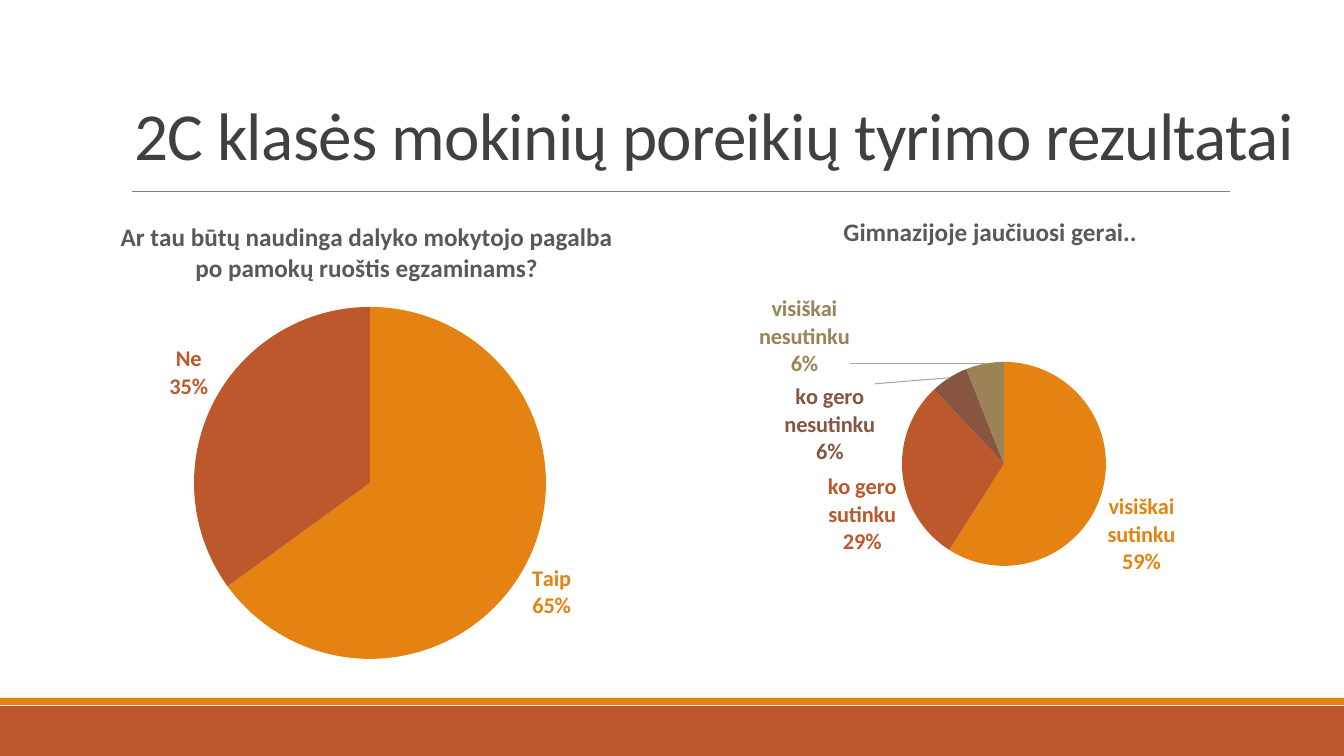
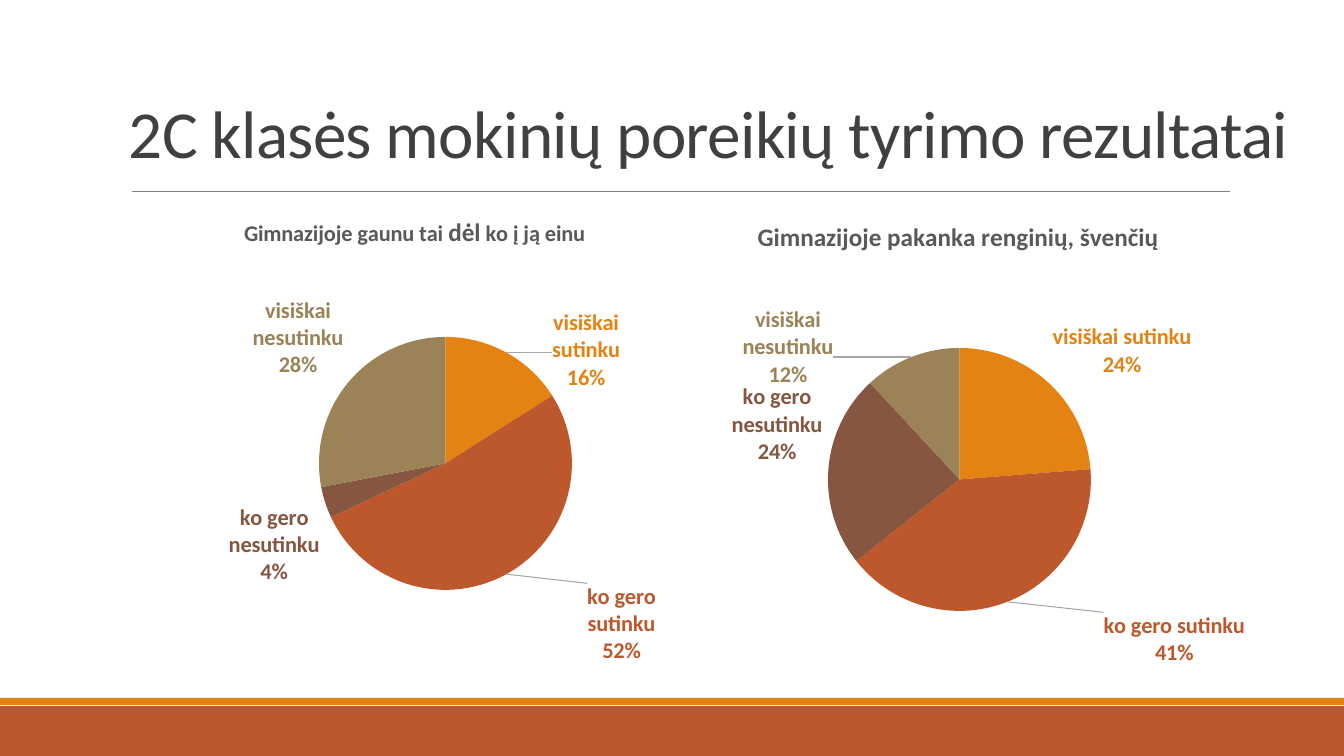
from lxml import etree
from pptx import Presentation
from pptx.chart.data import CategoryChartData
from pptx.dml.color import RGBColor
from pptx.enum.chart import XL_CHART_TYPE, XL_LABEL_POSITION
from pptx.enum.shapes import MSO_CONNECTOR, MSO_SHAPE
from pptx.enum.text import MSO_ANCHOR, PP_ALIGN
from pptx.oxml import parse_xml
from pptx.oxml.ns import nsdecls, qn
from pptx.util import Emu, Pt

# Content: all boxes are left, top, width, height in px
SLIDE_W, SLIDE_H = 1344, 756
FONT = "Calibri"
ORANGE, RUST, GREY = "E48312", "BD582C", "595959"
SLICE_COLOURS = [ORANGE, RUST, "865640", "9B8357"]
TITLE = "2C klasės mokinių poreikių tyrimo rezultatai"
BANDS = [((0, 706, 1344, 50), RUST), ((0, 698, 1344, 7), ORANGE)]
RULE = (132, 191, 1230, 191)
YES_NO = ["Taip", "Ne"]
AGREEMENT = ["visiškai sutinku", "ko gero sutinku",
             "ko gero nesutinku", "visiškai nesutinku"]

# heading: (text, size) runs; pie: left, top, diameter;
# moves: label shift from its usual place, by slice
SLIDES = [
    {"title_box": (121, 19, 1186, 160), "charts": [
        {"box": (53, 192, 634, 492), "pie": (194, 307, 352),
         "heading": [("Ar tau būtų naudinga dalyko mokytojo pagalba "
                      "po pamokų ruoštis egzaminams?", 18)],
         "heading_at": (116, 215), "cats": YES_NO, "vals": [65, 35],
         "moves": {}},
        {"box": (727, 202, 531, 456), "pie": (902, 362, 204),
         "heading": [("Gimnazijoje jaučiuosi gerai..", 18)],
         "heading_at": (839, 210), "cats": AGREEMENT,
         "vals": [59, 29, 6, 6], "moves": {2: (-71, 93), 3: (-134, 20)}},
    ]},
    {"title_box": (118, 17, 1181, 160), "charts": [
        {"box": (104, 192, 616, 488), "pie": (319, 337, 253),
         "heading": [("Gimnazijoje gaunu tai ", 16), ("dėl", 18),
                     (" ko į ją einu", 16)],
         "heading_at": (241, 212), "cats": AGREEMENT,
         "vals": [16, 52, 4, 28], "moves": {0: (43, 44), 1: (78, 4)}},
        {"box": (579, 192, 752, 488), "pie": (828, 348, 263),
         "heading": [("Gimnazijoje pakanka renginių, švenčių", 18)],
         "heading_at": (753, 215), "cats": AGREEMENT,
         "vals": [24, 41, 24, 12],
         "moves": {1: (94, 5), 2: (0, -44), 3: (-76, 37)}},
    ]},
]


# Helpers
def px(n):
    return Emu(round(n * 914400 / 100.8))


def rgb(value):
    return RGBColor.from_string(value)


def style(font, colour, **fmt):
    for name, value in {"name": FONT, **fmt}.items():
        setattr(font, name, value)
    font.color.rgb = rgb(colour)


def set_layout(parent, index, **values):
    """Place a chart part by fractions of the chart's size."""
    for old in parent.findall(qn("c:layout")):
        parent.remove(old)
    layout = parse_xml(f"<c:layout {nsdecls('c')}><c:manualLayout/></c:layout>")
    for tag, value in values.items():
        text = value if isinstance(value, str) else f"{value:.4f}"
        etree.SubElement(layout[0], qn(f"c:{tag}")).set("val", text)
    parent.insert(index, layout)


# Shared frame: bands, rule and title
def add_frame(s, title_box):
    for box, colour in BANDS:
        sp = s.shapes.add_shape(MSO_SHAPE.RECTANGLE, *map(px, box))
        sp.shadow.inherit = False
        sp.fill.solid()
        sp.fill.fore_color.rgb = rgb(colour)
        sp.line.fill.background()
    line = s.shapes.add_connector(MSO_CONNECTOR.STRAIGHT, *map(px, RULE))
    line.line.color.rgb = rgb("808080")
    line.line.width = Pt(0.5)
    etree.SubElement(line._element.spPr, qn("a:effectLst"))

    tf = s.shapes.add_textbox(*map(px, title_box)).text_frame
    for name, value in {"word_wrap": True, "margin_left": 0, "margin_right": 0,
                        "vertical_anchor": MSO_ANCHOR.BOTTOM}.items():
        setattr(tf, name, value)
    p = tf.paragraphs[0]
    p.alignment, p.line_spacing = PP_ALIGN.CENTER, 0.85
    r = p.add_run()
    r.text = TITLE
    style(r.font, "404040", size=Pt(48))
    r.font._element.set("spc", "-50")


# Pie charts
def add_label(point, colour, move, size):
    label = point.data_label
    style(label.font, colour, size=Pt(16), bold=True)
    label.position = XL_LABEL_POSITION.OUTSIDE_END
    d = label._get_or_add_dLbl()
    for tag, shown in (("showVal", "0"), ("showCatName", "1"),
                       ("showPercent", "1")):
        d.find(qn(f"c:{tag}")).set("val", shown)
    etree.SubElement(d, qn("c:separator")).text = "\n"
    if move:
        set_layout(d, 1, x=move[0] / size[0], y=move[1] / size[1])


def add_pie(s, spec):
    left, top, w, h = spec["box"]
    data = CategoryChartData()
    data.categories = spec["cats"]
    data.add_series("".join(text for text, _ in spec["heading"]), spec["vals"])
    chart = s.shapes.add_chart(XL_CHART_TYPE.PIE, *map(px, spec["box"]),
                               data).chart
    style(chart.font, "000000", size=Pt(10))
    chart.has_legend = False

    # Heading
    chart.has_title = True
    title = chart.chart_title
    title.include_in_layout = False
    p = title.text_frame.paragraphs[0]
    for text, size in spec["heading"]:
        r = p.add_run()
        r.text = text
        style(r.font, GREY, size=Pt(size), bold=True)
    x, y = spec["heading_at"]
    set_layout(title._element, 1, xMode="edge", yMode="edge",
               x=(x - left) / w, y=(y - top) / h)

    # Pie position
    x, y, d = spec["pie"]
    plot = chart.plots[0]
    plot.vary_by_categories = True
    set_layout(plot._element.getparent(), 0, layoutTarget="inner",
               xMode="edge", yMode="edge", x=(x - left) / w,
               y=(y - top) / h, w=d / w, h=d / h)
    etree.SubElement(plot._element, qn("c:firstSliceAng")).set("val", "0")

    # Slices and labels
    series = plot.series[0]
    labels = series.data_labels
    labels.show_value = False
    labels.show_category_name = labels.show_percentage = True
    for i, colour in enumerate(SLICE_COLOURS[:len(spec["vals"])]):
        point = series.points[i]
        point.format.fill.solid()
        point.format.fill.fore_color.rgb = rgb(colour)
        point.format.line.fill.background()
        add_label(point, colour, spec["moves"].get(i), (w, h))
    labels._element.append(parse_xml(
        f'<c:leaderLines {nsdecls("c", "a")}><c:spPr><a:ln w="9525"><a:solidFill>'
        '<a:srgbClr val="A6A6A6"/></a:solidFill></a:ln></c:spPr></c:leaderLines>'))


def main():
    prs = Presentation()
    prs.slide_width, prs.slide_height = px(SLIDE_W), px(SLIDE_H)
    for spec in SLIDES:
        s = prs.slides.add_slide(prs.slide_layouts[6])
        add_frame(s, spec["title_box"])
        for chart in spec["charts"]:
            add_pie(s, chart)
    prs.save("out.pptx")


if __name__ == "__main__":
    main()
